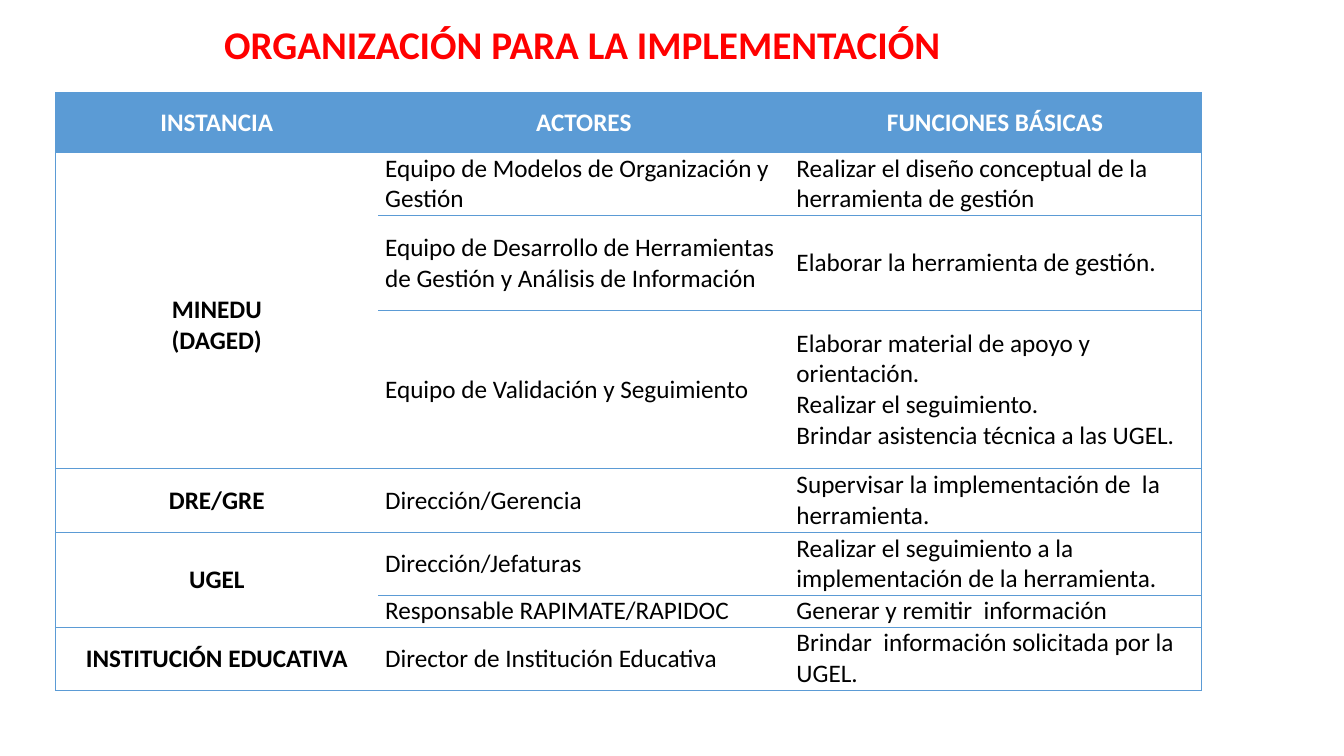
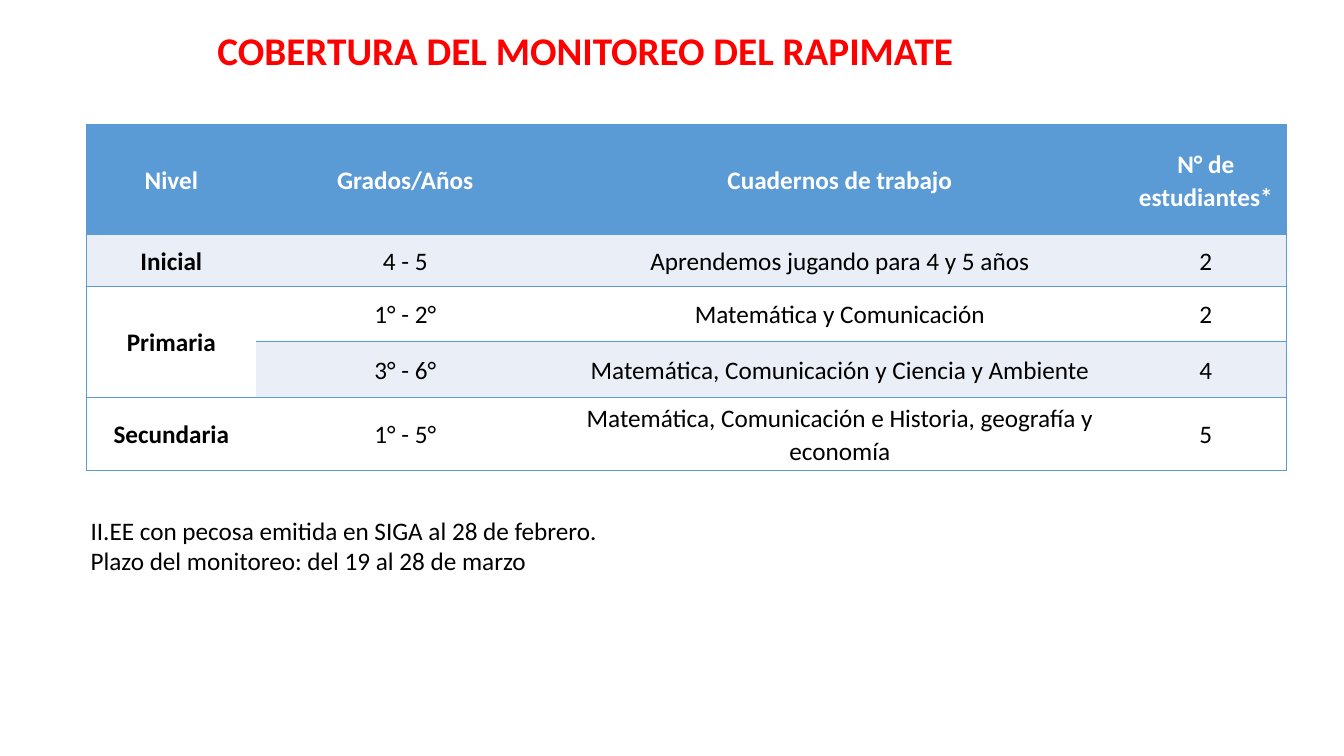
from dataclasses import dataclass

from lxml.etree import SubElement
from pptx import Presentation
from pptx.dml.color import RGBColor
from pptx.enum.text import MSO_ANCHOR, MSO_AUTO_SIZE, PP_ALIGN
from pptx.oxml.ns import qn
from pptx.util import Inches, Pt


@dataclass(frozen=True)
class Theme:
    font: str = "Calibri"
    title_size: int = 28
    body_size: int = 18
    title: str = "FF0000"
    accent: str = "5B9BD5"
    band: str = "EAEFF7"
    white: str = "FFFFFF"
    text: str = "000000"
    loose: float = 1.07


THEME = Theme()
CENTER, LEFT = PP_ALIGN.CENTER, PP_ALIGN.LEFT

# None continues the cell above it.
ORGANIZATION = dict(
    at=(0.55, 0.92),
    cols=[3.2, 4.08, 4.08],
    heights=[0.59, 0.63, 0.94, 1.57, 0.63, 0.63, 0.31, 0.63],
    rows=[
        ("INSTANCIA", "ACTORES", "FUNCIONES BÁSICAS"),
        ("MINEDU\n(DAGED)", "Equipo de Modelos de Organización y Gestión",
         "Realizar el diseño conceptual de la herramienta de gestión"),
        (None, "Equipo de Desarrollo de Herramientas de Gestión y Análisis de Información",
         "Elaborar la herramienta de gestión."),
        (None, "Equipo de Validación y Seguimiento",
         "Elaborar material de apoyo y orientación.\nRealizar el seguimiento.\n"
         "Brindar asistencia técnica a las UGEL."),
        ("DRE/GRE", "Dirección/Gerencia",
         "Supervisar la implementación de  la herramienta."),
        ("UGEL", "Dirección/Jefaturas",
         "Realizar el seguimiento a la implementación de la herramienta."),
        (None, "Responsable RAPIMATE/RAPIDOC", "Generar y remitir  información"),
        ("INSTITUCIÓN EDUCATIVA", "Director de Institución Educativa",
         "Brindar  información solicitada por la UGEL."),
    ],
    body_align=LEFT, spacing=1.0, line=0.5, bands=(THEME.white, THEME.white),
)

COVERAGE = dict(
    at=(0.86, 1.24),
    cols=[1.68, 2.96, 5.66, 1.6],
    heights=[1.09, 0.51, 0.55, 0.55, 0.73],
    rows=[
        ("Nivel", "Grados/Años", "Cuadernos de trabajo", "N° de estudiantes*"),
        ("Inicial", "4 - 5", "Aprendemos jugando para 4 y 5 años", "2"),
        ("Primaria", "1° - 2°", "Matemática y Comunicación", "2"),
        (None, "3° - 6°", "Matemática, Comunicación y Ciencia y Ambiente", "4"),
        ("Secundaria", "1° - 5°",
         "Matemática, Comunicación e Historia, geografía y economía", "5"),
    ],
    body_align=CENTER, spacing=THEME.loose, line=1, bands=(THEME.white, THEME.band),
)

NOTES = ("II.EE con pecosa emitida en SIGA al 28 de febrero.\n"
         "Plazo del monitoreo: del 19 al 28 de marzo")


def write(tf, text, size=THEME.body_size, color=THEME.text, bold=False,
          align=LEFT, spacing=1.0):
    tf.text = text
    for p in tf.paragraphs:
        p.alignment, p.line_spacing = align, spacing
        p.font.name, p.font.size, p.font.bold = THEME.font, Pt(size), bold
        p.font.color.rgb = RGBColor.from_string(color)


def add_text(slide, text, at, **style):
    tf = slide.shapes.add_textbox(*map(Inches, at)).text_frame
    tf.word_wrap = True
    tf.auto_size = MSO_AUTO_SIZE.SHAPE_TO_FIT_TEXT
    write(tf, text, **style)


def add_title(slide, text, left, top):
    add_text(slide, text, (left, top, 11.03, 0.61), size=THEME.title_size,
             color=THEME.title, bold=True, align=CENTER, spacing=THEME.loose)


def set_borders(cell, width, first, last):
    """Rule every row; close the sides only at the table's outer columns."""
    tcPr = cell._tc.get_or_add_tcPr()
    for side, shown in (("L", first), ("R", last), ("T", True), ("B", True)):
        ln = SubElement(tcPr, qn(f"a:ln{side}"), w=str(Pt(width)))
        if shown:
            fill = SubElement(ln, qn("a:solidFill"))
            SubElement(fill, qn("a:srgbClr"), val=THEME.accent)
        else:
            SubElement(ln, qn("a:noFill"))


def add_grid(slide, at, cols, heights, rows, body_align, spacing, line, bands):
    table = slide.shapes.add_table(
        len(rows), len(cols), *map(Inches, (*at, sum(cols), sum(heights)))).table
    for column, width in zip(table.columns, cols):
        column.width = Inches(width)
    for row, height in zip(table.rows, heights):
        row.height = Inches(height)

    for i, row in enumerate(rows):
        header = i == 0
        for j, text in enumerate(row):
            cell = table.cell(i, j)
            set_borders(cell, line, j == 0, j == len(cols) - 1)
            cell.fill.solid()
            cell.fill.fore_color.rgb = RGBColor.from_string(
                THEME.accent if header else bands[i % 2])
            cell.margin_left = cell.margin_right = Inches(0.07)
            cell.margin_top = cell.margin_bottom = 0
            cell.vertical_anchor = MSO_ANCHOR.MIDDLE
            if text is not None:
                write(cell.text_frame, text, bold=header or j == 0,
                      color=THEME.white if header else THEME.text,
                      align=CENTER if header or j == 0 else body_align,
                      spacing=spacing)

    labels = [i for i, row in enumerate(rows) if row[0] is not None]
    for start, end in zip(labels, labels[1:] + [len(rows)]):
        if end - start > 1:
            table.cell(start, 0).merge(table.cell(end - 1, 0))
    return table


def main():
    prs = Presentation()
    prs.slide_width, prs.slide_height = Inches(13.33), Inches(7.5)
    blank = prs.slide_layouts[6]

    s = prs.slides.add_slide(blank)
    add_title(s, "ORGANIZACIÓN PARA LA IMPLEMENTACIÓN", 0.26, 0.12)
    table = add_grid(s, **ORGANIZATION)
    table.cell(1, 0).margin_top = Inches(0.3)

    s = prs.slides.add_slide(blank)
    add_grid(s, **COVERAGE)
    add_title(s, "COBERTURA DEL MONITOREO DEL RAPIMATE", 0.29, 0.18)
    add_text(s, NOTES, (0.8, 5.06, 5.77, 0.71))

    prs.save("out.pptx")


if __name__ == "__main__":
    main()
